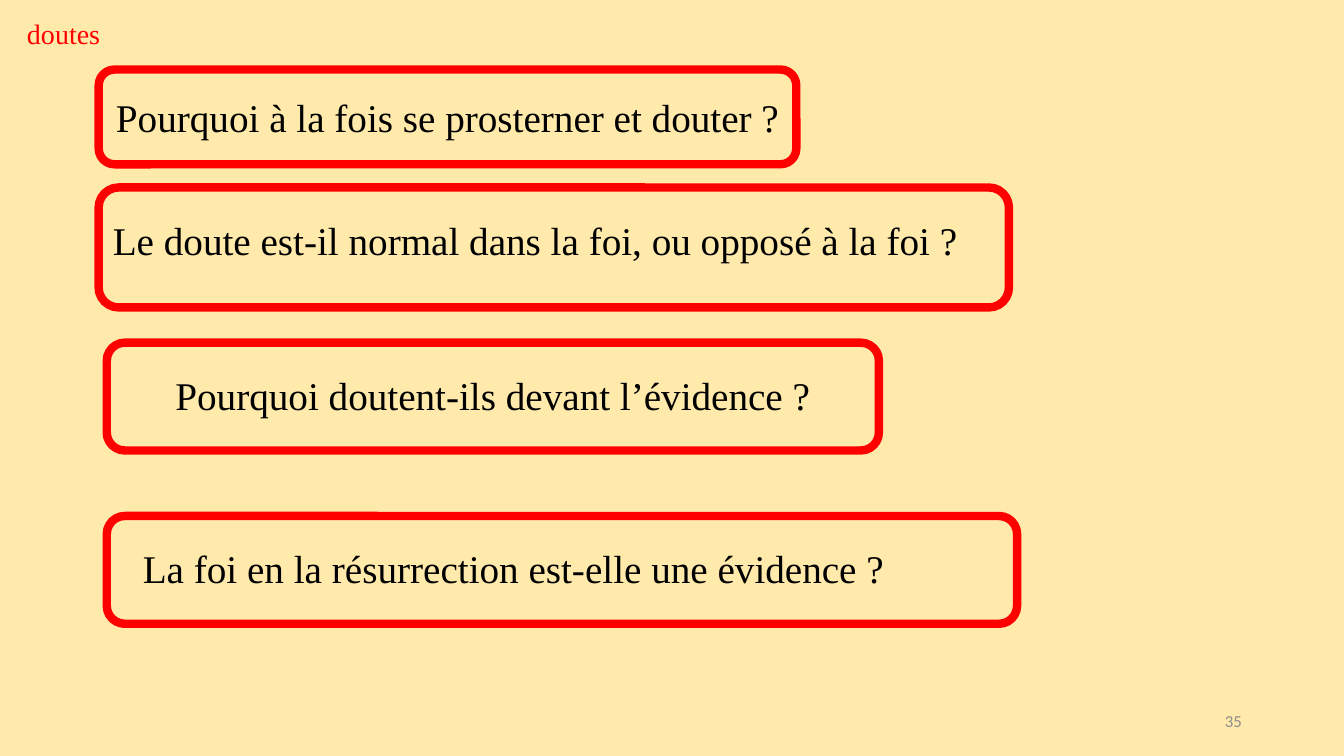
from dataclasses import dataclass
from typing import Optional

import pptx
import pptx.dml.color
import pptx.enum.shapes
import pptx.enum.text
import pptx.util

Pt = pptx.util.Pt
Align = pptx.enum.text.PP_ALIGN
Anchor = pptx.enum.text.MSO_ANCHOR

RED = "FF0000"
BLACK = "000000"
GREY = "8C8C8C"
PALE_GOLD = "FFEAAB"
SERIF = "Times New Roman"


@dataclass(frozen=True)
class Box:
    left: float
    top: float
    width: float
    height: float

    def lengths(self) -> tuple:
        return tuple(Pt(v) for v in (self.left, self.top, self.width, self.height))


@dataclass(frozen=True)
class Question:
    """A framed question; without a label box the text sits in the frame itself."""
    text: str
    frame: Box
    label: Optional[Box] = None
    align: Align = Align.CENTER


QUESTIONS = [
    Question("Pourquoi à la fois se prosterner et douter ?",
             Box(70.5, 49.7, 498.3, 67.7)),
    Question("Le doute est-il normal dans la foi, ou opposé à la foi ?",
             Box(70.5, 133.9, 650.2, 85.7), Box(70.5, 151.2, 623.5, 41)),
    Question("Pourquoi doutent-ils devant l’évidence ?",
             Box(76.3, 244.8, 551.5, 77), Box(98.6, 261.4, 506.9, 41)),
    Question("La foi en la résurrection est-elle une évidence ?",
             Box(76.3, 368.6, 650.2, 77), Box(95, 385.2, 599.8, 41), Align.LEFT),
]


def rgb(color: str) -> pptx.dml.color.RGBColor:
    return pptx.dml.color.RGBColor.from_string(color)


def write(shape, text: str, size: float, color: str, font: str = SERIF,
          align: Align = Align.LEFT, anchor: Anchor = Anchor.TOP) -> None:
    frame = shape.text_frame
    frame.text = text
    frame.word_wrap = True
    frame.vertical_anchor = anchor
    paragraph = frame.paragraphs[0]
    paragraph.alignment = align
    for run in paragraph.runs:
        run.font.name = font
        run.font.size = Pt(size)
        run.font.color.rgb = rgb(color)


def add_label(slide, box: Box):
    return slide.shapes.add_textbox(*box.lengths())


def add_frame(slide, box: Box):
    frame = slide.shapes.add_shape(
        pptx.enum.shapes.MSO_SHAPE.ROUNDED_RECTANGLE, *box.lengths())
    frame.shadow.inherit = False
    frame.fill.background()
    frame.line.color.rgb = rgb(RED)
    frame.line.width = Pt(6)
    return frame


def add_question(slide, question: Question) -> None:
    holder = add_frame(slide, question.frame)
    anchor = Anchor.MIDDLE
    if question.label:
        holder = add_label(slide, question.label)
        anchor = Anchor.TOP
    write(holder, question.text, 28, BLACK, align=question.align, anchor=anchor)


def main() -> None:
    deck = pptx.Presentation()
    deck.slide_width, deck.slide_height = Pt(960), Pt(540)
    slide = deck.slides.add_slide(deck.slide_layouts[6])
    slide.background.fill.solid()
    slide.background.fill.fore_color.rgb = rgb(PALE_GOLD)

    write(add_label(slide, Box(12.2, 8.6, 70.6, 31.7)), "doutes", 20, RED)
    for question in QUESTIONS:
        add_question(slide, question)
    write(add_label(slide, Box(678.2, 500.4, 216, 28.8)), "35", 12, GREY,
          font="Calibri", align=Align.RIGHT, anchor=Anchor.MIDDLE)

    deck.save("out.pptx")


if __name__ == "__main__":
    main()
